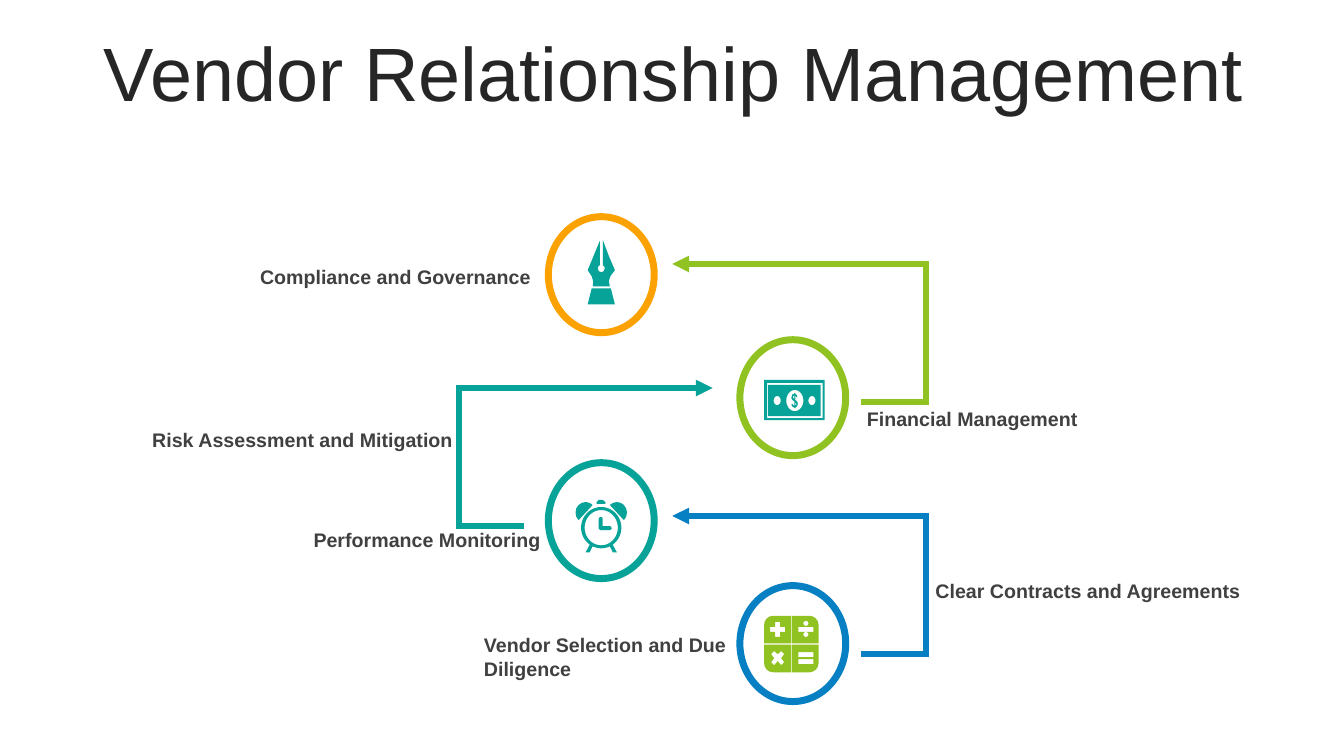
from math import cos, pi, sin

from lxml import etree
from pptx import Presentation
from pptx.dml.color import RGBColor
from pptx.enum.shapes import MSO_SHAPE
from pptx.enum.text import MSO_ANCHOR, MSO_AUTO_SIZE, PP_ALIGN
from pptx.oxml.ns import qn
from pptx.util import Pt

OVAL = MSO_SHAPE.OVAL
MIDDLE, CENTER = MSO_ANCHOR.MIDDLE, PP_ALIGN.CENTER
NO_FIT, GROW = MSO_AUTO_SIZE.NONE, MSO_AUTO_SIZE.SHAPE_TO_FIT_TEXT
FONT = "Arial"
INK = RGBColor(0x26, 0x26, 0x26)
GREY = RGBColor(0x40, 0x40, 0x40)
WHITE = RGBColor(0xFF, 0xFF, 0xFF)
ORANGE = RGBColor(0xFB, 0xA2, 0x00)
GREEN = RGBColor(0x90, 0xC2, 0x21)
TEAL = RGBColor(0x07, 0xA3, 0x98)
BLUE = RGBColor(0x06, 0x80, 0xC3)

# Content: labels as text, left, top, width, height
TITLE = "Vendor Relationship Management"
LABELS = [
    ("Compliance and Governance", 177.1, 185.8, 218.2, 24.5),
    ("Financial Management", 610.6, 287.3, 172.8, 24.5),
    ("Risk Assessment and Mitigation", 100.1, 302.4, 243.4, 24.5),
    ("Performance Monitoring", 215.3, 373.7, 190.8, 24.5),
    ("Clear Contracts and Agreements", 659.5, 409.7, 243.4, 24.5),
    ("Vendor Selection and Due Diligence", 337, 448.6, 243.4, 41),
]

# Circles run from top to bottom and swap between two columns
CIRCLES = [ORANGE, GREEN, TEAL, BLUE]
COLUMNS = (391.7, 528.5)
TOP, STEP = 154.8, 87.84
WIDE, HIGH = 75.6, 82.8

# Arrows as tip x, tip y, direction of the long arm, colour
ARROWS = [
    (480.2, 188.6, 1, GREEN),
    (509, 277.2, -1, TEAL),
    (480.2, 368.6, 1, BLUE),
]
REACH, DROP, BACK = 181.1, 98.64, 46.1


# Contours of the icons, on a grid of 0.72 pt
UNIT = 0.72


def box(x1, y1, x2, y2):
    return [(x1, y1), (x2, y1), (x2, y2), (x1, y2)]


def ring(x, y, rx, ry, count=40):
    turns = [2 * pi * i / count for i in range(count)]
    return [(x + rx * cos(t), y + ry * sin(t)) for t in turns]


def flip(points, wide):
    return [(wide - x, y) for x, y in points]


def drop(points, high):
    return [(x, high - y) for x, y in points]


NOTE = [
    box(0, 0, 60, 40), box(3, 3, 58, 38), box(4, 5, 56, 36),
    ring(30.5, 20.5, 8.5, 10.5), ring(13, 20.5, 3.5, 4.5), ring(47.5, 20.5, 3.5, 4.5),
    [(30, 13), (31, 13), (31, 14), (32.5, 15), (33, 17), (32, 17), (31, 15),
     (31, 20), (33, 21.5), (33.5, 24), (32.5, 26.5), (31, 27.5), (31, 28),
     (30, 28), (30, 27.5), (28, 26.5), (27, 24), (28.2, 24), (30, 26),
     (30, 21), (28, 20), (27, 18), (28, 14.5), (30, 13.7)],
    [(31, 22), (31, 26), (32.2, 24)],
    [(30, 15), (28.4, 17), (30, 19)],
]
PEN = [
    [(4, 48), (23, 48), (27, 64), (0, 64)],
    [(15, 0), (15, 25), (16.5, 26.5), (17, 28), (16, 31), (13.5, 32), (11, 31),
     (10, 28), (10.5, 26.5), (12, 25), (12, 1), (0, 30), (4, 36), (5.5, 41),
     (5, 46), (22, 46), (21, 41), (22.5, 36), (27, 30), (21, 16)],
]
EAR = [(10, 2), (14, 3), (17, 5), (3, 20), (0.7, 16.5), (0, 12.5), (0.7, 8.5),
       (3, 5), (6, 3)]
FOOT = [(14, 44.5), (17, 46), (14, 52), (10, 52)]
CLOCK = [
    ring(25.5, 27.5, 20, 20.5), ring(25.5, 27.5, 16.5, 17.5),
    [(23, 18.5), (24, 17), (26, 17), (27, 18.5), (27, 26), (34.5, 26),
     (36, 28), (34.5, 30), (24.5, 30), (23, 28.5)],
    [(21, 4), (21, 2), (23, 0), (27, 0), (29.5, 2), (29.5, 4)],
    EAR, flip(EAR, 51), FOOT, flip(FOOT, 51),
]
KEY = [(9, 0), (26.6, 0), (26.6, 27.4), (0, 27.4), (0, 9), (0.7, 5.5),
       (2.6, 2.6), (5.5, 0.7)]
CALC = [
    KEY, flip(KEY, 54), drop(KEY, 56), drop(flip(KEY, 54), 56),
    [(11, 6), (16, 6), (16, 11), (21, 11), (21, 16), (16, 16), (16, 21),
     (11, 21), (11, 16), (6, 16), (6, 11), (11, 11)],
    [(10, 35), (7, 38), (10, 42), (7, 46), (10, 49), (13.5, 45), (17, 49),
     (20, 46), (17, 42), (20, 38), (17, 35), (13.5, 38)],
    box(34, 11, 49, 16), ring(41.5, 7.5, 2.5, 2.5), ring(41.5, 18.5, 2.5, 2.5),
    box(34, 36, 49, 41), box(34, 43, 49, 48),
]
ICONS = [
    (PEN, 419.8, 171.4, TEAL),
    (NOTE, 545.8, 271.4, TEAL),
    (CLOCK, 411.1, 357.1, TEAL),
    (CALC, 545.8, 439.9, GREEN),
]


def outline(shapes, paths, close):
    paths = [[(Pt(x), Pt(y)) for x, y in path] for path in paths]
    pen = shapes.build_freeform(*paths[0][0])
    for i, path in enumerate(paths):
        if i:
            pen.move_to(*path[0])
        pen.add_line_segments(path[1:], close=close)
    shape = pen.convert_to_shape()
    shape.shadow.inherit = False
    return shape


def paint(shape, fill):
    shape.fill.solid()
    shape.fill.fore_color.rgb = fill


def stroke(shape, color, width):
    shape.line.color.rgb = color
    shape.line.width = Pt(width)


def style(para, size, color, bold):
    font = para.font
    font.name, font.size, font.bold = FONT, Pt(size), bold
    font.color.rgb = color


def main():
    deck = Presentation()
    deck.slide_width, deck.slide_height = Pt(960), Pt(540)
    slide = deck.slides.add_slide(deck.slide_layouts[5])
    shapes = slide.shapes

    # Title
    title = shapes.title
    title.left, title.top, title.width, title.height = Pt(25.2), Pt(26.6), Pt(911.5), Pt(56.9)
    frame = title.text_frame
    frame.text = TITLE
    frame.vertical_anchor, frame.auto_size = MIDDLE, NO_FIT
    para = frame.paragraphs[0]
    para.alignment, para.line_spacing, para.space_before = CENTER, 0.9, Pt(10)
    style(para, 54, INK, False)

    # Circles
    for i, color in enumerate(CIRCLES):
        disc = shapes.add_shape(OVAL, Pt(COLUMNS[i % 2]), Pt(TOP + i * STEP), Pt(WIDE), Pt(HIGH))
        disc.shadow.inherit = False
        paint(disc, WHITE)
        stroke(disc, color, 5)

    # Bent arrows, with the head at the first point
    for x, y, side, color in ARROWS:
        far, low = x + side * REACH, y + DROP
        path = [(x, y), (far, y), (far, low), (far - side * BACK, low)]
        arrow = outline(shapes, [path], False)
        arrow.fill.background()
        stroke(arrow, color, 4)
        line = arrow.line._get_or_add_ln()
        etree.SubElement(line, qn("a:miter"), lim="800000")
        etree.SubElement(line, qn("a:headEnd"), type="triangle")

    # Labels
    for text, *place in LABELS:
        label = shapes.add_textbox(*map(Pt, place))
        frame = label.text_frame
        frame.word_wrap, frame.auto_size = True, GROW
        frame.margin_left = frame.margin_right = Pt(8.64)
        frame.margin_top = frame.margin_bottom = Pt(3.6)
        frame.text = text
        style(frame.paragraphs[0], 14, GREY, True)

    # Icons
    for paths, left, top, color in ICONS:
        paths = [[(left + x * UNIT, top + y * UNIT) for x, y in path] for path in paths]
        icon = outline(shapes, paths, True)
        paint(icon, color)
        icon.line.fill.background()

    deck.save("out.pptx")


if __name__ == "__main__":
    main()
